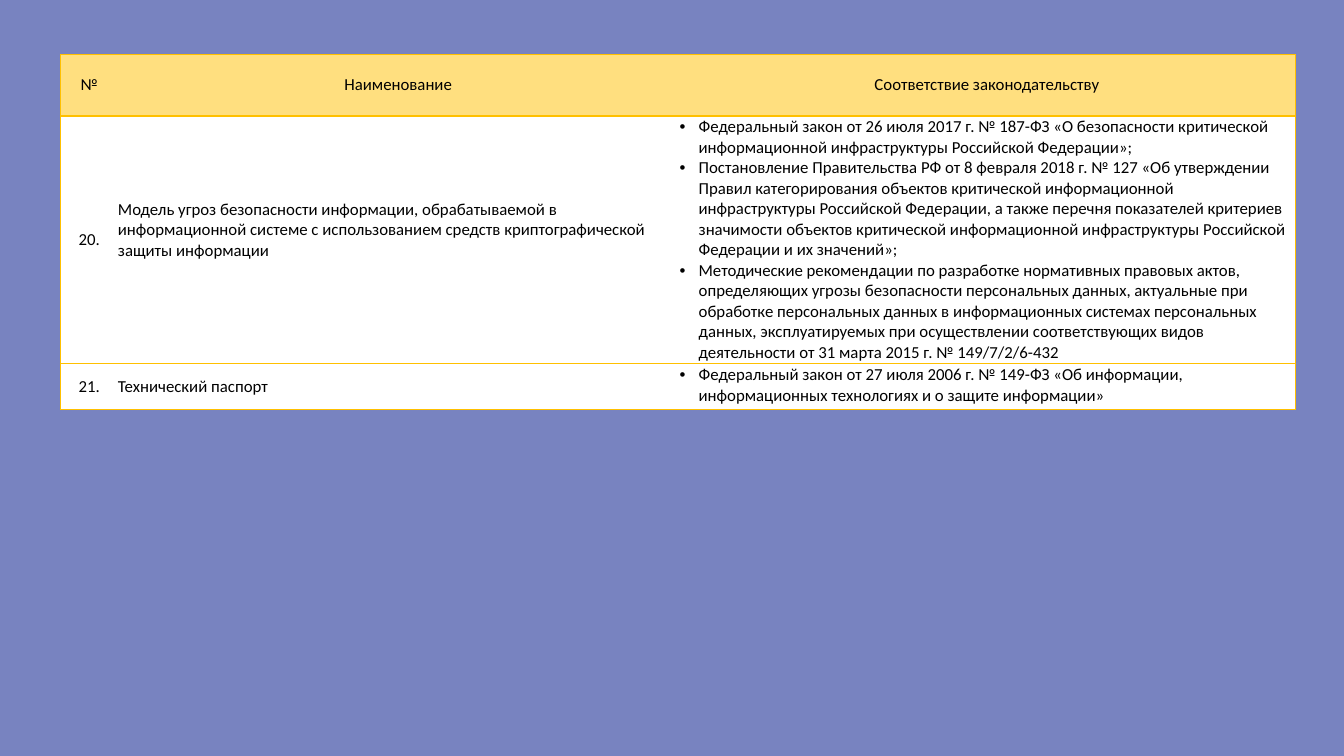
from lxml import etree
from pptx import Presentation
from pptx import util as u
from pptx.dml.color import RGBColor
from pptx.enum import text
from pptx.oxml.ns import qn

BACKGROUND, GOLD, HEADER, WHITE, BLACK = "7883C0", "FFC000", "FFDF7F", "FFFFFF", "000000"
COLUMN_WIDTHS = (0.57, 5.56, 6.12)
ROW_HEIGHTS = (0.61, 2.46, 0.45)
HEADINGS = ("№", "Наименование", "Соответствие законодательству")
DOCUMENTS = (
    ("20.",
     "Модель угроз безопасности информации, обрабатываемой в информационной системе "
     "с использованием средств криптографической защиты информации",
     ("Федеральный закон от 26 июля 2017 г. № 187-ФЗ «О безопасности критической "
      "информационной инфраструктуры Российской Федерации»;",
      "Постановление Правительства РФ от 8 февраля 2018 г. № 127 «Об утверждении Правил "
      "категорирования объектов критической информационной инфраструктуры Российской "
      "Федерации, а также перечня показателей критериев значимости объектов критической "
      "информационной инфраструктуры Российской Федерации и их значений»;",
      "Методические рекомендации по разработке нормативных правовых актов, определяющих "
      "угрозы безопасности персональных данных, актуальные при обработке персональных "
      "данных в информационных системах персональных данных, эксплуатируемых при "
      "осуществлении соответствующих видов деятельности от 31 марта 2015 г. № 149/7/2/6-432")),
    ("21.",
     "Технический паспорт",
     ("Федеральный закон от 27 июля 2006 г. № 149-ФЗ «Об информации, информационных "
      "технологиях и о защите информации»",)),
)


def color(value):
    return RGBColor.from_string(value)


def set_borders(cell, visible):
    """Draw gold lines on the named sides and hide the others."""
    properties = cell._tc.get_or_add_tcPr()
    for index, side in enumerate(("L", "R", "T", "B")):
        line = etree.Element(qn(f"a:ln{side}"), w=str(u.Pt(1)))
        if side in visible:
            fill = etree.SubElement(line, qn("a:solidFill"))
            etree.SubElement(fill, qn("a:srgbClr"), val=GOLD)
        else:
            etree.SubElement(line, qn("a:noFill"))
        properties.insert(index, line)


def add_bullet(para):
    properties = para._p.get_or_add_pPr()
    properties.set("marL", str(u.Inches(0.19)))
    properties.set("indent", str(-u.Inches(0.19)))
    etree.SubElement(properties, qn("a:buFont"), typeface="Arial")
    etree.SubElement(properties, qn("a:buChar"), char="•")


def fill_cell(cell, lines, fill, borders, centred=False, bulleted=False):
    cell.fill.solid()
    cell.fill.fore_color.rgb = color(fill)
    set_borders(cell, borders)
    margin = u.Inches(0.01 if bulleted else 0)
    cell.margin_left = cell.margin_right = cell.margin_top = cell.margin_bottom = margin
    cell.vertical_anchor = text.MSO_ANCHOR.TOP if bulleted else text.MSO_ANCHOR.MIDDLE
    cell.text_frame.text = "\n".join(lines)
    for para in cell.text_frame.paragraphs:
        para.alignment = text.PP_ALIGN.CENTER if centred else text.PP_ALIGN.LEFT
        if bulleted:
            add_bullet(para)
        for span in para.runs:
            span.font.name = "Calibri"
            span.font.size = u.Pt(12)
            span.font.bold = False
            span.font.color.rgb = color(BLACK)


def add_document_table(page):
    frame = page.shapes.add_table(
        len(ROW_HEIGHTS), len(COLUMN_WIDTHS), u.Inches(0.6), u.Inches(0.54),
        u.Inches(sum(COLUMN_WIDTHS)), u.Inches(sum(ROW_HEIGHTS)))
    table = frame.table
    table.first_row = table.horz_banding = False
    for column, width in zip(table.columns, COLUMN_WIDTHS):
        column.width = u.Inches(width)
    for row, height in zip(table.rows, ROW_HEIGHTS):
        row.height = u.Inches(height)

    column_borders = ("LTB", "TB", "RTB")
    for index, heading in enumerate(HEADINGS):
        fill_cell(table.cell(0, index), [heading], HEADER, column_borders[index], centred=True)
    for index, (number, name, laws) in enumerate(DOCUMENTS, start=1):
        number_cell, name_cell, laws_cell = table.rows[index].cells
        fill_cell(number_cell, [number], WHITE, column_borders[0], centred=True)
        fill_cell(name_cell, [name], WHITE, column_borders[1])
        fill_cell(laws_cell, laws, WHITE, column_borders[2], bulleted=True)
    # The long name sits one half line above the middle of its row.
    table.cell(1, 1).margin_bottom = u.Inches(0.2)


def main():
    deck = Presentation()
    deck.slide_width, deck.slide_height = u.Inches(13.33), u.Inches(7.5)
    page = deck.slides.add_slide(deck.slide_layouts[6])
    page.background.fill.solid()
    page.background.fill.fore_color.rgb = color(BACKGROUND)
    add_document_table(page)
    deck.save("out.pptx")


if __name__ == "__main__":
    main()
